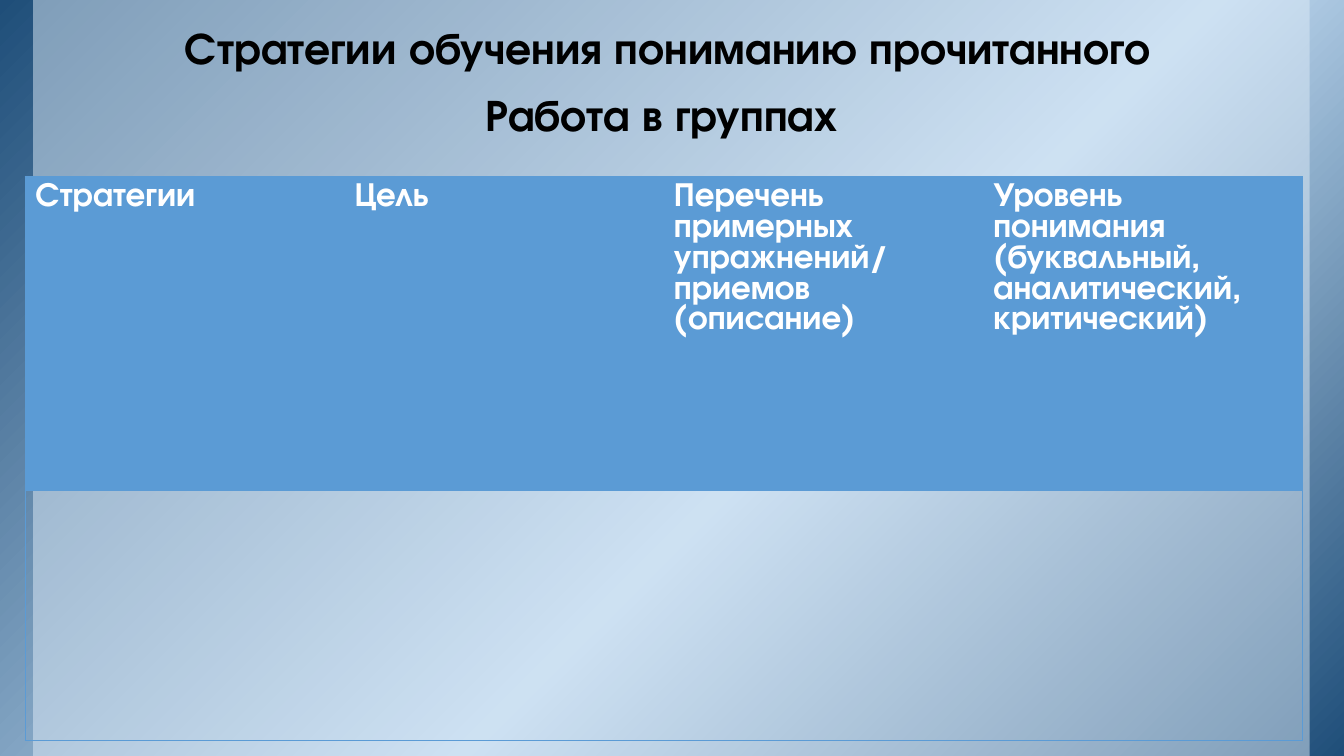
from dataclasses import dataclass

import pptx
import pptx.dml.color
import pptx.enum.shapes
import pptx.enum.text
import pptx.oxml
import pptx.oxml.ns
import pptx.util
from pptx.util import Inches


@dataclass(frozen=True)
class Theme:
    font: str = "TeX Gyre Adventor"
    navy: str = "1F4E79"
    sky: str = "BDD7EE"
    panel: str = "DEEBF7"
    accent: str = "5B9BD5"
    ink: str = "000000"
    white: str = "FFFFFF"
    title_size: float = 31.8
    title_leading: float = 29.2
    title_gap: float = 18.7
    table_size: float = 24
    table_leading: float = 22.1
    border: float = 0.5


THEME = Theme()
NO_STYLE_NO_GRID = "{2D5ABB26-0587-4C30-8999-92F81FD0307C}"
HEADERS = [
    ["Стратегии"],
    ["Цель"],
    ["Перечень примерных упражнений/", "приемов", "(описание)"],
    ["Уровень понимания (буквальный, аналитический, критический)"],
]


def rgb(color):
    return pptx.dml.color.RGBColor.from_string(color)


def xml(markup):
    """Parse a markup template whose root carries the drawing namespace."""
    return pptx.oxml.parse_xml(
        markup.replace("NS", pptx.oxml.ns.nsdecls("a"), 1))


def write(frame, lines, *, size, color, leading, align=None, gap=0):
    """Fill a text frame, one paragraph for each line."""
    for index, line in enumerate(lines):
        para = frame.add_paragraph() if index else frame.paragraphs[0]
        para.alignment = align
        para.line_spacing = pptx.util.Pt(leading)
        para.space_before = pptx.util.Pt(gap if index else 0)
        span = para.add_run()
        span.text = line
        span.font.name = THEME.font
        span.font.size = pptx.util.Pt(size)
        span.font.bold = True
        span.font.color.rgb = rgb(color)


def add_panel(slide, left, width, color):
    panel = slide.shapes.add_shape(
        pptx.enum.shapes.MSO_SHAPE.RECTANGLE,
        Inches(left), 0, Inches(width), Inches(7.5))
    panel.shadow.inherit = False
    panel.line.fill.background()
    panel.fill.solid()
    panel.fill.fore_color.rgb = rgb(color)
    return panel


def set_gradient(shape, stops, angle):
    """Replace a solid fill by a linear gradient, angle clockwise."""
    marks = "".join(
        f'<a:gs pos="{percent * 1000}"><a:srgbClr val="{color}"/></a:gs>'
        for percent, color in stops)
    solid = shape.element.spPr.find(pptx.oxml.ns.qn("a:solidFill"))
    solid.getparent().replace(solid, xml(
        f'<a:gradFill NS rotWithShape="1"><a:gsLst>{marks}</a:gsLst>'
        f'<a:lin ang="{angle * 60000}" scaled="0"/></a:gradFill>'))


def set_opacity(shape, percent):
    color = shape.element.spPr.find(
        pptx.oxml.ns.qn("a:solidFill") + "/" + pptx.oxml.ns.qn("a:srgbClr"))
    color.append(xml(f'<a:alpha NS val="{percent * 1000}"/>'))


def add_title(slide, lines):
    box = slide.shapes.add_textbox(
        Inches(1.07), Inches(0.25), Inches(11.11), Inches(1.67))
    frame = box.text_frame
    frame.word_wrap = True
    frame.margin_left = frame.margin_right = Inches(0.13)
    frame.margin_top = frame.margin_bottom = Inches(0.07)
    write(frame, lines, size=THEME.title_size, color=THEME.ink,
          leading=THEME.title_leading, gap=THEME.title_gap,
          align=pptx.enum.text.PP_ALIGN.CENTER)


def set_borders(cell, sides):
    """Draw thin accent lines on the given sides, in the order L, R, T, B."""
    properties = cell._tc.get_or_add_tcPr()
    width = int(pptx.util.Pt(THEME.border))
    for position, side in enumerate(sides):
        properties.insert(position, xml(
            f'<a:ln{side} NS w="{width}"><a:solidFill>'
            f'<a:srgbClr val="{THEME.accent}"/></a:solidFill></a:ln{side}>'))


def add_strategy_table(slide):
    columns = len(HEADERS)
    table = slide.shapes.add_table(
        2, columns, Inches(0.25), Inches(1.75),
        Inches(12.67), Inches(5.59)).table
    table.horz_banding = False
    table._tbl.tblPr.find(
        pptx.oxml.ns.qn("a:tableStyleId")).text = NO_STYLE_NO_GRID
    for row, height in zip(table.rows, (3.11, 2.48)):
        row.height = Inches(height)
    for column, lines in enumerate(HEADERS):
        header, empty = table.cell(0, column), table.cell(1, column)
        header.fill.solid()
        header.fill.fore_color.rgb = rgb(THEME.accent)
        empty.fill.background()
        write(header.text_frame, lines, size=THEME.table_size,
              color=THEME.white, leading=THEME.table_leading)
        outer = {0: "L", columns - 1: "R"}.get(column, "")
        set_borders(header, outer + "T")
        set_borders(empty, outer + "TB")


def main():
    deck = pptx.Presentation()
    deck.slide_width, deck.slide_height = Inches(13.33), Inches(7.5)
    slide = deck.slides.add_slide(deck.slide_layouts[6])
    backdrop = add_panel(slide, 0, 13.33, THEME.navy)
    set_gradient(backdrop, [(0, THEME.navy), (58, THEME.sky),
                            (100, THEME.navy)], angle=45)
    veil = add_panel(slide, 0.33, 12.66, THEME.panel)
    set_opacity(veil, 50)
    add_title(slide, ["Стратегии обучения пониманию прочитанного",
                      "Работа в группах "])
    add_strategy_table(slide)
    deck.save("out.pptx")


if __name__ == "__main__":
    main()
